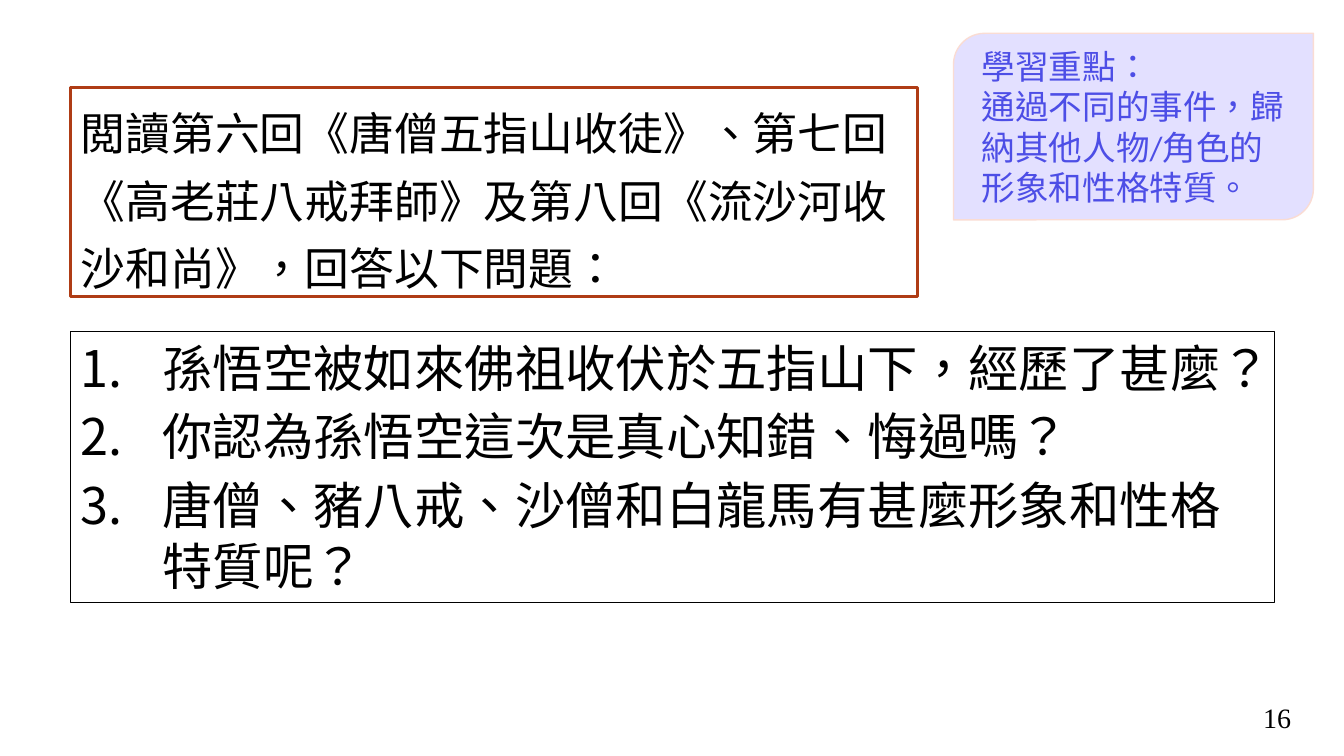
from pptx import Presentation
from pptx.dml.color import RGBColor
from pptx.enum import lang, shapes, text
from pptx.util import Cm, Pt
from lxml import etree

BLACK = RGBColor(0x00, 0x00, 0x00)
WHITE = RGBColor(0xFF, 0xFF, 0xFF)
RUST = RGBColor(0xAF, 0x3C, 0x15)
LAVENDER = RGBColor(0xE3, 0xE0, 0xFF)
PEACH = RGBColor(0xFA, 0xDC, 0xD3)
VIOLET = RGBColor(0x4D, 0x4E, 0xE6)
A = "{http://schemas.openxmlformats.org/drawingml/2006/main}"

INSTRUCTION = ("閲讀第六回《唐僧五指山收徒》、第七回《高老莊八戒拜師》"
               "及第八回《流沙河收沙和尚》，回答以下問題：")
QUESTIONS = ["孫悟空被如來佛祖收伏於五指山下，經歷了甚麼？",
             "你認為孫悟空這次是真心知錯、悔過嗎？",
             "唐僧、豬八戒、沙僧和白龍馬有甚麼形象和性格特質呢？"]
FOCUS = "學習重點：\n通過不同的事件，歸納其他人物/角色的形象和性格特質。"


def place(sp, box):
    sp.left, sp.top, sp.width, sp.height = (Cm(v) for v in box)


def outline(sp, color, width):
    sp.line.color.rgb = color
    sp.line.width = Pt(width)


def write(sp, paragraphs, size, font, color=BLACK,
          anchor=text.MSO_ANCHOR.TOP, align=text.PP_ALIGN.LEFT):
    """Fill a shape with paragraphs of one style and return them."""
    tf = sp.text_frame
    tf.word_wrap = True
    tf.auto_size = text.MSO_AUTO_SIZE.NONE
    tf.vertical_anchor = anchor
    for i, content in enumerate(paragraphs):
        p = tf.add_paragraph() if i else tf.paragraphs[0]
        p.text = content
        p.alignment = align
        p.space_before = Pt(0)
        p.font.size, p.font.name, p.font.color.rgb = Pt(size), font, color
        for r in p.runs:
            r.font.language_id = lang.MSO_LANGUAGE_ID.TRADITIONAL_CHINESE
    return tf.paragraphs


def number(p, indent, font):
    """Give a paragraph an automatic number with a hanging indent."""
    pPr = p._p.get_or_add_pPr()
    pPr.set("marL", str(indent))
    pPr.set("indent", str(-indent))
    bullet_font = etree.Element(A + "buFont", typeface=font)
    auto_number = etree.Element(A + "buAutoNum", type="arabicPeriod")
    default = pPr.find(A + "defRPr")
    default.addprevious(bullet_font)
    default.addprevious(auto_number)


def add_instruction(s, box):
    s.shapes.title.element.getparent().remove(s.shapes.title.element)
    sp = s.placeholders[1]
    place(sp, box)
    sp.fill.solid()
    sp.fill.fore_color.rgb = WHITE
    outline(sp, RUST, 2.25)
    write(sp, [INSTRUCTION], 32, "Calibri")[0].line_spacing = 1.25


def add_questions(s, box):
    sp = s.shapes.add_textbox(*(Cm(v) for v in box))
    outline(sp, BLACK, 0.75)
    for p in write(sp, QUESTIONS, 36, "Times New Roman"):
        p.space_before = Pt(6)
        number(p, Cm(2.06), "Calibri")


def add_focus(s, box):
    sp = s.shapes.add_shape(shapes.MSO_SHAPE.ROUND_2_DIAG_RECTANGLE,
                            *(Cm(v) for v in box))
    sp.shadow.inherit = False
    sp.fill.solid()
    sp.fill.fore_color.rgb = LAVENDER
    outline(sp, PEACH, 1)
    p, = write(sp, [FOCUS], 24, "Calibri", VIOLET, text.MSO_ANCHOR.MIDDLE)
    p._p.get_or_add_pPr().set("marL", str(Cm(0.23)))


def add_page_number(s, box):
    sp = s.shapes.add_textbox(*(Cm(v) for v in box))
    tf = sp.text_frame
    tf.margin_left = tf.margin_right = Cm(0.18)
    tf.margin_top = tf.margin_bottom = Cm(0.1)
    write(sp, ["16"], 20, "Times New Roman",
          anchor=text.MSO_ANCHOR.MIDDLE, align=text.PP_ALIGN.RIGHT)


def main():
    prs = Presentation()
    prs.slide_width, prs.slide_height = Cm(33.87), Cm(19.05)
    s = prs.slides.add_slide(prs.slide_layouts[0])
    add_instruction(s, (1.78, 2.21, 21.34, 5.26))
    add_questions(s, (1.78, 8.36, 30.33, 6.83))
    add_page_number(s, (28.27, 17.58, 4.45, 0.99))
    add_focus(s, (24.03, 0.84, 9.07, 4.7))
    prs.save("out.pptx")


if __name__ == "__main__":
    main()
